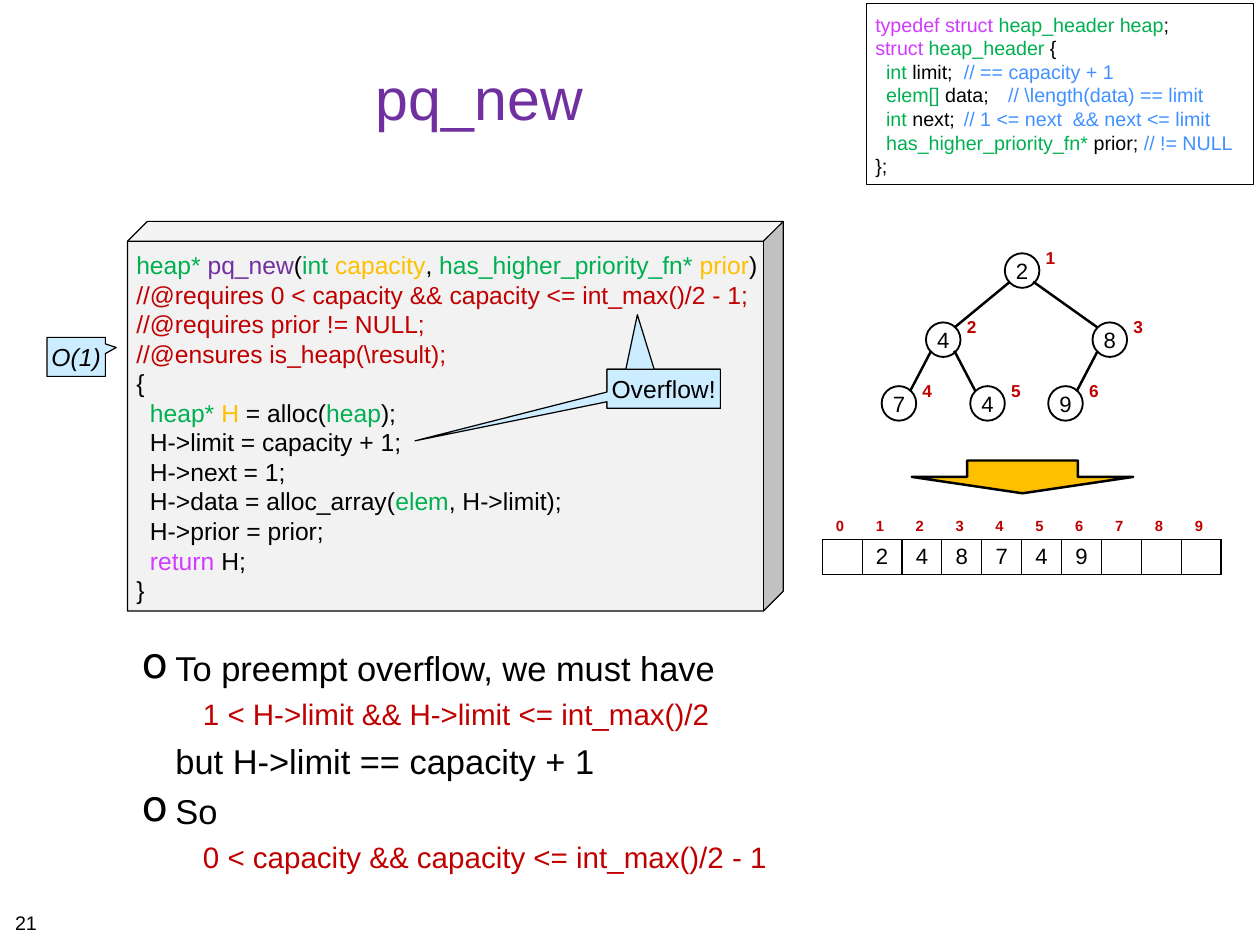
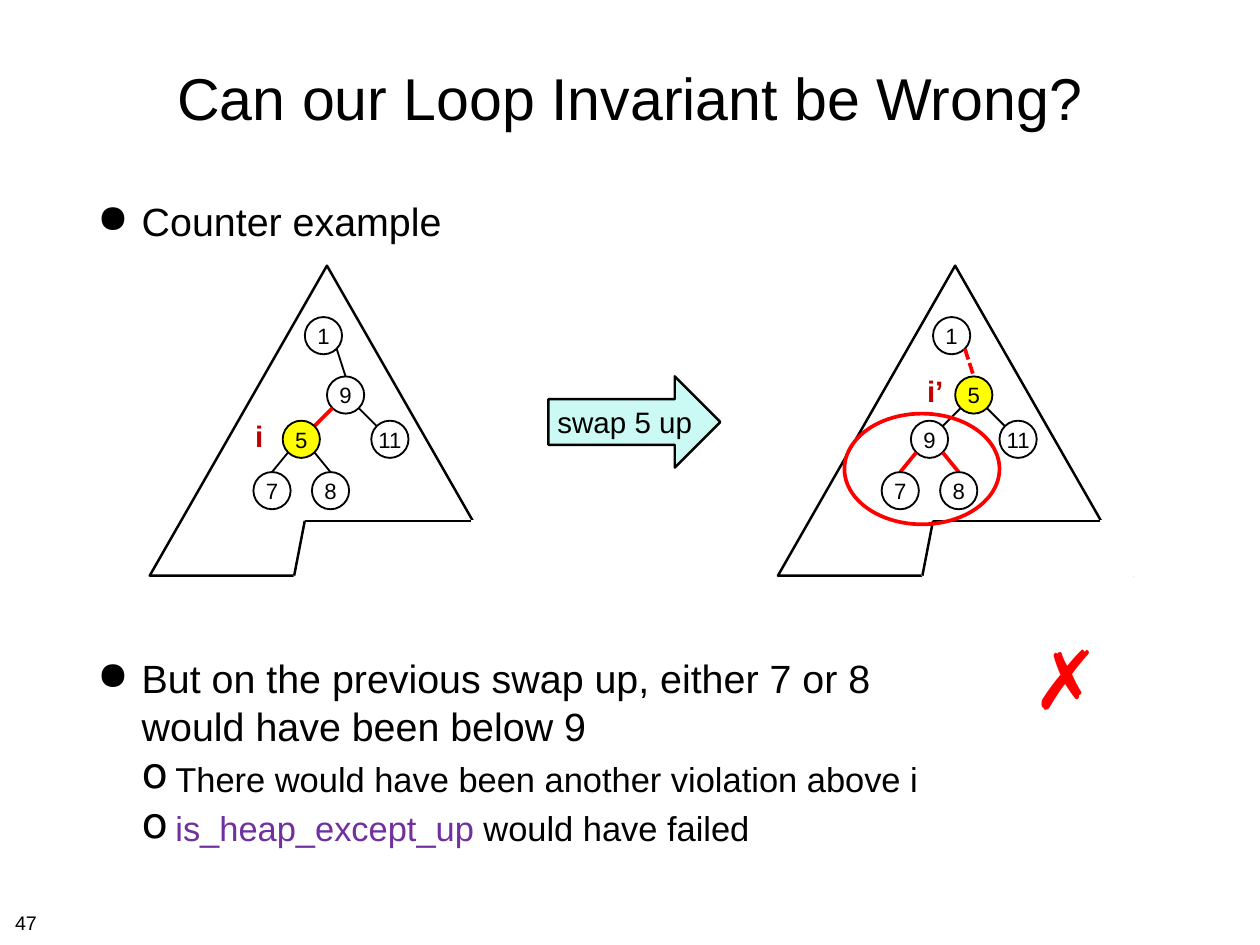
"""Build two lecture slides about heap-based priority queues."""
from dataclasses import dataclass, replace
from typing import NamedTuple

from lxml.etree import SubElement
from pptx import Presentation
from pptx.dml.color import RGBColor
from pptx.enum.dml import MSO_LINE
from pptx.enum.shapes import MSO_CONNECTOR, MSO_SHAPE
from pptx.enum.text import MSO_ANCHOR, MSO_AUTO_SIZE, PP_ALIGN
from pptx.oxml.ns import qn
from pptx.util import Pt

PX = 9144
FONT = "Arial"
COLORS = {
    "black": "000000", "white": "FFFFFF", "purple": "7030A0", "green": "00B050",
    "gold": "FFC000", "crimson": "C00000", "magenta": "D03BFF", "blue": "4091FF",
    "red": "FF0000", "yellow": "FFFF00", "paper": "F2F2F2", "sky": "CCECFF",
    "mint": "CBFAF5",
}


class Span(NamedTuple):
    text: str
    color: str = "black"


class Box(NamedTuple):
    left: int
    top: int
    width: int
    height: int

    def emu(self) -> list[int]:
        return [value * PX for value in self]


@dataclass(frozen=True)
class Para:
    spans: tuple[Span, ...]
    size: int = 0
    left: int = 0
    hang: int = 0
    before: int = 0
    bullet: str = ""
    bullet_size: int = 100
    tab: int = 0


@dataclass(frozen=True)
class Style:
    size: int
    bold: bool = False
    italic: bool = False
    align: PP_ALIGN = PP_ALIGN.CENTER
    anchor: MSO_ANCHOR = MSO_ANCHOR.MIDDLE
    margins: tuple[int, int, int, int] = (6, 6, 6, 6)
    wrap: bool = False


@dataclass(frozen=True)
class Node:
    label: str
    x: int
    y: int
    parent: int = -1
    fill: str = ""
    edge: str = "black"
    edge_width: float = 1.5
    dashed: bool = False
    joins_top: bool = False


TITLE = Style(48, wrap=True)
BODY = Style(32, align=PP_ALIGN.LEFT, anchor=MSO_ANCHOR.TOP, wrap=True)
NUMBER = replace(BODY, size=16, wrap=False)
CODE = replace(NUMBER, size=20, margins=(10, 10, 6, 6))
CALLOUT = Style(20, margins=(5, 5, 5, 5))
NODE = Style(18, margins=(0, 0, 0, 0))
LABEL = Style(14, bold=True, anchor=MSO_ANCHOR.TOP, margins=(10, 5, 10, 5))
POINT = Para((), 32, 50, -50, 8, "●")
SUBPOINT = Para((), 28, 88, -38, 7, "o", 125)
CONTINUED = replace(SUBPOINT, hang=0, bullet="")
FORMULA = Para((), 24, 119, 0, 6)


def rgb(color: str) -> RGBColor:
    return RGBColor.from_string(COLORS[color])


def line(*spans: tuple[str, str] | str, like: Para = Para(())) -> Para:
    return replace(like, spans=tuple(Span(span) if isinstance(span, str) else Span(*span) for span in spans))


def write(frame, paras: list[Para], style: Style) -> None:
    frame.word_wrap = style.wrap
    frame.auto_size = MSO_AUTO_SIZE.NONE if style.wrap else MSO_AUTO_SIZE.SHAPE_TO_FIT_TEXT
    frame.vertical_anchor = style.anchor
    frame.margin_left, frame.margin_top, frame.margin_right, frame.margin_bottom = [
        margin * PX for margin in style.margins]
    for index, para in enumerate(paras):
        paragraph = frame.paragraphs[0] if index == 0 else frame.add_paragraph()
        write_paragraph(paragraph, para, style)


def write_paragraph(paragraph, para: Para, style: Style) -> None:
    paragraph.alignment = style.align
    paragraph.space_before = Pt(para.before)
    properties = paragraph._p.get_or_add_pPr()
    properties.set("marL", str(para.left * PX))
    properties.set("indent", str(para.hang * PX))
    if para.bullet:
        color = SubElement(properties, qn("a:buClr"))
        SubElement(color, qn("a:srgbClr"), val=COLORS["black"])
        SubElement(properties, qn("a:buSzPct"), val=str(para.bullet_size * 1000))
        SubElement(properties, qn("a:buChar"), char=para.bullet)
    else:
        SubElement(properties, qn("a:buNone"))
    if para.tab:
        tabs = SubElement(properties, qn("a:tabLst"))
        SubElement(tabs, qn("a:tab"), pos=str(para.tab * PX), algn="l")
    font = paragraph.font
    font.name, font.size = FONT, Pt(para.size or style.size)
    font.bold, font.italic = style.bold, style.italic
    for span in para.spans:
        for index, part in enumerate(span.text.split("\n")):
            if index:
                paragraph.add_line_break()
            run = paragraph.add_run()
            run.text = part
            run.font.color.rgb = rgb(span.color)


def add_text(page, box: Box, paras: list[Para], style: Style) -> None:
    write(page.shapes.add_textbox(*box.emu()).text_frame, paras, style)


def add_figure(page, kind: MSO_SHAPE, box: Box, fill: str = "", outline: str = "black",
               width: float = 1, adjust: tuple[float, ...] = ()):
    figure = page.shapes.add_shape(kind, *box.emu())
    figure.shadow.inherit = False
    if fill:
        figure.fill.solid()
        figure.fill.fore_color.rgb = rgb(fill)
    else:
        figure.fill.background()
    figure.line.color.rgb = rgb(outline)
    figure.line.width = Pt(width)
    for index, value in enumerate(adjust):
        figure.adjustments[index] = value
    return figure


def add_line(page, start: tuple[int, int], end: tuple[int, int], color: str = "black",
             width: float = 2, dashed: bool = False) -> None:
    points = [value * PX for value in (*start, *end)]
    connector = page.shapes.add_connector(MSO_CONNECTOR.STRAIGHT, *points)
    connector.line.color.rgb = rgb(color)
    connector.line.width = Pt(width)
    if dashed:
        connector.line.dash_style = MSO_LINE.SQUARE_DOT
    SubElement(connector._element.spPr, qn("a:effectLst"))


def add_tree(page, nodes: list[Node], size: int, shift: int = 0) -> None:
    radius = size // 2
    corner = round(radius * 0.71)
    for node in nodes:
        x = node.x + shift
        if node.parent >= 0:
            parent = nodes[node.parent]
            side = 1 if node.x > parent.x else -1
            start = (parent.x + shift + side * corner, parent.y + corner)
            end = (x, node.y - radius) if node.joins_top else (x - side * corner, node.y - corner)
            add_line(page, start, end, node.edge, node.edge_width, node.dashed)
        box = Box(x - radius, node.y - radius, size, size)
        circle = add_figure(page, MSO_SHAPE.OVAL, box, node.fill, width=1.5)
        write(circle.text_frame, [line(node.label)], replace(NODE, wrap=size < 40))


def add_callout(page, box: Box, text: str, tail: tuple[float, float], italic: bool = False) -> None:
    callout = add_figure(page, MSO_SHAPE.RECTANGULAR_CALLOUT, box, "sky", adjust=tail)
    write(callout.text_frame, [line(text)], replace(CALLOUT, italic=italic))


def add_array(page, left: int, top: int, values: list[str]) -> None:
    box = Box(left, top, 45 * len(values), 70)
    table = page.shapes.add_table(2, len(values), *box.emu()).table
    table.first_row = table.horz_banding = False
    table.rows[0].height, table.rows[1].height = 30 * PX, 40 * PX
    for column, value in enumerate(values):
        table.columns[column].width = 45 * PX
        texts = (Span(str(column), "crimson"), Span(value))
        styles = (Style(12, bold=True, anchor=MSO_ANCHOR.BOTTOM, margins=(5, 5, 10, 5)),
                  Style(18, margins=(10, 5, 10, 5)))
        for row, sides in enumerate(("B", "LRTB")):
            cell, style = table.cell(row, column), styles[row]
            cell.fill.background()
            cell.vertical_anchor = style.anchor
            cell.margin_left, cell.margin_top, cell.margin_right, cell.margin_bottom = [
                margin * PX for margin in style.margins]
            spans = (texts[row],) if texts[row].text else ()
            write_paragraph(cell.text_frame.paragraphs[0], Para(spans), style)
            properties = cell._tc.get_or_add_tcPr()
            for index, side in enumerate(sides):
                border = SubElement(properties, qn(f"a:ln{side}"), w=str(Pt(1)))
                fill = SubElement(border, qn("a:solidFill"))
                SubElement(fill, qn("a:srgbClr"), val=COLORS["black"])
                properties.insert(index, border)


def add_page(deck, title: Span, title_width: int, number: int):
    page = deck.slides.add_slide(deck.slide_layouts[6])
    add_text(page, Box(104, 28, title_width, 164), [line(title)], TITLE)
    add_text(page, Box(11, 1023, 37, 35), [line(str(number))], NUMBER)
    return page


def build_pq_new(deck) -> None:
    page = add_page(deck, Span("pq_new", "purple"), 874, 21)
    add_text(page, Box(104, 725, 1214, 246), [
        line("To preempt overflow, we must have", like=SUBPOINT),
        line(("1 < H->limit && H->limit <= int_max()/2", "crimson"), like=FORMULA),
        line("but H->limit == capacity + 1", like=CONTINUED),
        line("So", like=SUBPOINT),
        line(("0 < capacity && capacity <= int_max()/2 - 1", "crimson"), like=FORMULA),
    ], BODY)
    code = add_figure(page, MSO_SHAPE.CUBE, Box(144, 250, 740, 440), "paper", adjust=(0.051,))
    write(code.text_frame, [
        line(("heap* ", "green"), ("pq_new", "purple"), "(", ("int ", "green"), ("capacity", "gold"),
             ", ", ("has_higher_priority_fn* ", "green"), ("prior", "gold"), ")"),
        line(("//@requires 0 < capacity && capacity <= int_max()/2 - 1;", "crimson")),
        line(("//@requires prior != NULL;", "crimson")),
        line(("//@ensures is_heap(\\result);", "crimson")),
        line("{"),
        line(("  heap* ", "green"), ("H", "gold"), " = alloc(", ("heap", "green"), ");"),
        line("  H->limit = capacity + 1;"),
        line("  H->next = 1;"),
        line("  H->data = alloc_array(", ("elem", "green"), ", H->limit);"),
        line("  H->prior = prior;"),
        line(("  return", "magenta"), " H;"),
        line("}"),
    ], CODE)
    header = add_figure(page, MSO_SHAPE.RECTANGLE, Box(978, 4, 437, 204))
    field = Para((), tab=137)
    write(header.text_frame, [
        line(("typedef struct ", "magenta"), ("heap_header heap", "green"), ";"),
        line(("struct ", "magenta"), ("heap_header ", "green"), "{"),
        line(("  int", "green"), " limit; \t", ("// == capacity + 1", "blue"), like=field),
        line(("  elem[] ", "green"), "data;\t", ("// \\length(data) == limit", "blue"), like=field),
        line(("  int", "green"), " next;\t", ("// 1 <= next  && next <= limit", "blue"), like=field),
        line(("  has_higher_priority_fn* ", "green"), "prior;", (" // != NULL", "blue")),
        line("};"),
    ], replace(CODE, size=16))
    add_callout(page, Box(53, 381, 66, 44), "O(1)", (0.686, -0.24), italic=True)
    add_array(page, 928, 579, ["", "2", "4", "8", "7", "4", "9", "", "", ""])
    places = [("2", 1153, 305, -1), ("4", 1064, 383, 0), ("8", 1252, 383, 0),
              ("7", 1014, 455, 1), ("4", 1114, 455, 1), ("9", 1202, 455, 2)]
    nodes = [Node(*place, edge_width=2) for place in places]
    add_tree(page, nodes, 39)
    for index, node in enumerate(nodes, start=1):
        add_text(page, Box(node.x + 17, node.y - 31, 31, 34), [line((str(index), "crimson"))], LABEL)
    add_figure(page, MSO_SHAPE.DOWN_ARROW, Box(1029, 520, 250, 37), "gold", width=2)
    for tail in ((-0.232, -1.899), (-2.193, 1.336)):
        add_callout(page, Box(685, 417, 128, 44), "Overflow!", tail)


def add_heap(page, shift: int, nodes: list[Node]) -> None:
    add_figure(page, MSO_SHAPE.ISOSCELES_TRIANGLE, Box(169 + shift, 300, 400, 350), width=2)
    add_figure(page, MSO_SHAPE.RECTANGLE, Box(332 + shift, 588, 238, 62), "white", "white", 2)
    for end in ((532 + shift, 588), (332 + shift, 650)):
        add_line(page, (344 + shift, 588), end)
    add_tree(page, nodes, 42, shift)


def build_counter_example(deck) -> None:
    page = add_page(deck, Span("Can our Loop Invariant be Wrong?"), 1214, 47)
    add_text(page, Box(104, 217, 1214, 60), [line("Counter example", like=POINT)], BODY)
    add_text(page, Box(104, 733, 1214, 238), [
        line("But on the previous swap up, either 7 or 8\nwould have been below 9", like=POINT),
        line("There would have been another violation above i", like=SUBPOINT),
        line(("is_heap_except_up", "purple"), " would have failed", like=SUBPOINT),
    ], BODY)
    before = [Node("1", 365, 379), Node("9", 390, 446, 0, joins_top=True),
              Node("5", 340, 496, 1, "yellow", "red", 3), Node("11", 440, 496, 1),
              Node("7", 307, 554, 2, joins_top=True), Node("8", 373, 554, 2, joins_top=True)]
    after = list(before)
    after[1] = replace(before[1], label="5", fill="yellow", edge="red", edge_width=3, dashed=True)
    after[2] = replace(before[2], label="9", fill="", edge="black", edge_width=1.5)
    after[4:] = [replace(leaf, edge="red", edge_width=3) for leaf in before[4:]]
    add_heap(page, 0, before)
    add_heap(page, 709, after)
    marker = replace(LABEL, size=24)
    add_text(page, Box(278, 467, 29, 50), [line(("i", "crimson"))], marker)
    add_text(page, Box(1036, 416, 39, 50), [line(("i’", "crimson"))], marker)
    arrow = add_figure(page, MSO_SHAPE.RIGHT_ARROW, Box(619, 425, 194, 103), "mint", width=2)
    write(arrow.text_frame, [line("swap 5 up")], Style(24, margins=(10, 6, 6, 6)))
    add_figure(page, MSO_SHAPE.OVAL, Box(953, 467, 175, 125), outline="red", width=3)
    add_text(page, Box(1156, 704, 80, 121), [line(("✗", "red"))], replace(LABEL, size=66))


def main() -> None:
    deck = Presentation()
    deck.slide_width, deck.slide_height = 1422 * PX, 1067 * PX
    build_pq_new(deck)
    build_counter_example(deck)
    deck.save("out.pptx")


if __name__ == "__main__":
    main()
